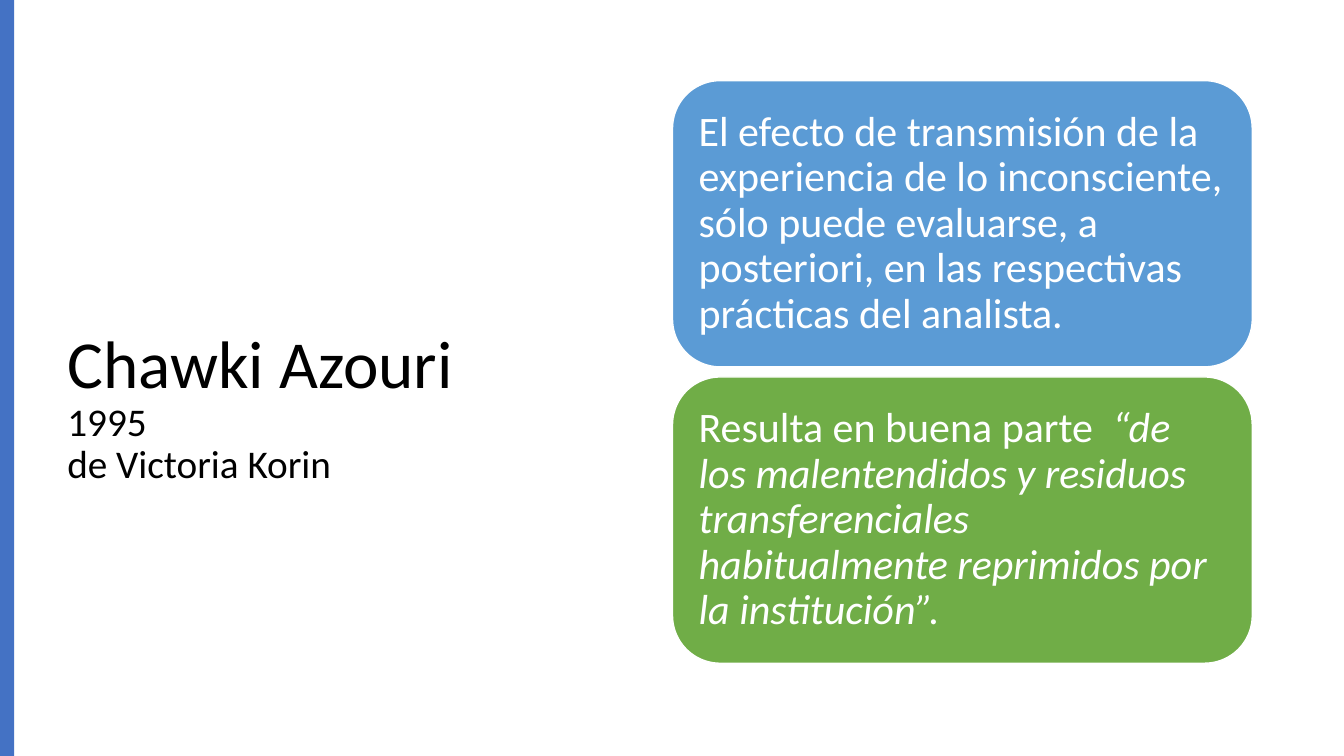
import pptx
import pptx.dml.color
import pptx.enum.shapes
import pptx.enum.text
import pptx.util

Inches = pptx.util.Inches
Pt = pptx.util.Pt
SHAPES = pptx.enum.shapes.MSO_SHAPE

COLOURS = {
    "bar": "4472C4",
    "blue": "5B9BD5",
    "green": "70AD47",
    "white": "FFFFFF",
    "black": "000000",
}


class SlideBuilder:
    font = "Calibri"
    line_spacing = 0.9
    card_size = 30

    def __init__(self, slide):
        self.slide = slide

    def colour(self, name):
        return pptx.dml.color.RGBColor.from_string(COLOURS[name])

    def box(self, preset, left, top, width, height, fill, outline=None):
        shape = self.slide.shapes.add_shape(
            preset, Inches(left), Inches(top), Inches(width), Inches(height))
        shape.shadow.inherit = False
        shape.fill.solid()
        shape.fill.fore_color.rgb = self.colour(fill)
        if outline:
            shape.line.color.rgb = self.colour(outline)
            shape.line.width = Pt(1)
        else:
            shape.line.fill.background()
        return shape

    def start_text(self, shape):
        """Prepare the frame of a shape and return its first paragraph."""
        frame = shape.text_frame
        frame.word_wrap = True
        frame.vertical_anchor = pptx.enum.text.MSO_ANCHOR.MIDDLE
        paragraph = frame.paragraphs[0]
        paragraph.alignment = pptx.enum.text.PP_ALIGN.LEFT
        paragraph.line_spacing = self.line_spacing
        return paragraph

    def run(self, paragraph, text, size, colour, italic=False):
        run = paragraph.add_run()
        run.text = text
        run.font.name = self.font
        run.font.size = Pt(size)
        run.font.italic = italic
        run.font.color.rgb = self.colour(colour)

    def title(self, lines, left, top, width, height, top_margin):
        """Add a title whose lines are (text, size) pairs."""
        shape = self.slide.shapes.add_textbox(
            Inches(left), Inches(top), Inches(width), Inches(height))
        paragraph = self.start_text(shape)
        shape.text_frame.margin_top = Inches(top_margin)
        for index, (text, size) in enumerate(lines):
            if index:
                paragraph.add_line_break()
            self.run(paragraph, text, size, "black")

    def card(self, top, height, fill, runs):
        """Add a rounded card whose runs are (text, italic) pairs."""
        shape = self.box(SHAPES.ROUNDED_RECTANGLE, 6.67, top, 5.75, height,
                         fill, "white")
        paragraph = self.start_text(shape)
        frame = shape.text_frame
        frame.margin_left = frame.margin_right = Inches(0.12)
        frame.margin_top = frame.margin_bottom = Inches(0.12)
        for text, italic in runs:
            self.run(paragraph, text, self.card_size, "white", italic)


def main():
    presentation = pptx.Presentation()
    presentation.slide_width = Inches(13.33)
    presentation.slide_height = Inches(7.5)
    slide = presentation.slides.add_slide(presentation.slide_layouts[6])
    builder = SlideBuilder(slide)

    title_lines = [
        ("Chawki Azouri", 48),
        ("1995", 28),
        ("de Victoria Korin", 28),
    ]
    builder.title(title_lines, 0.57, 0.68, 5.67, 6.02, top_margin=0.78)
    builder.box(SHAPES.RECTANGLE, 0, 0, 0.14, 7.5, "bar")

    cards = [
        ("blue", [
            ("El efecto de transmisión de la experiencia de lo inconsciente, "
             "sólo puede evaluarse, a posteriori, en las respectivas "
             "prácticas del analista.", False),
        ]),
        ("green", [
            ("Resulta en buena parte  ", False),
            ("“de los malentendidos y residuos transferenciales "
             "habitualmente reprimidos por la institución”.", True),
        ]),
    ]
    first_top, card_height, gap = 0.8, 2.84, 0.1
    for index, (fill, runs) in enumerate(cards):
        top = first_top + index * (card_height + gap)
        builder.card(top, card_height, fill, runs)

    presentation.save("out.pptx")


if __name__ == "__main__":
    main()
